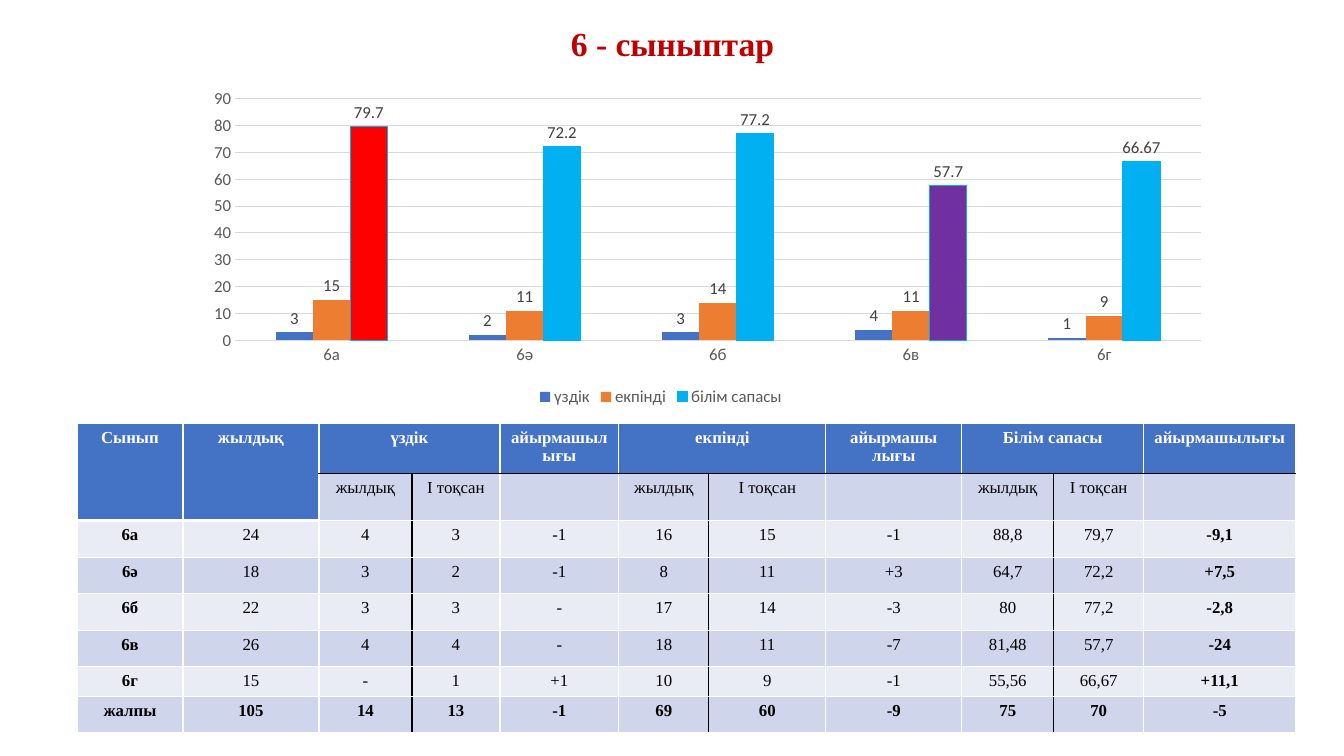
import dataclasses

import lxml.etree
import pptx
import pptx.chart.data
import pptx.dml.color
import pptx.enum.chart
import pptx.enum.text
import pptx.oxml.ns
import pptx.util

PX = 12192000 / 1344  # EMU per px


@dataclasses.dataclass(frozen=True)
class Theme:
    serif: str = "Times New Roman"
    sans: str = "Calibri"
    title_size: int = 24
    body_size: int = 12
    title: str = "C00000"
    black: str = "000000"
    white: str = "FFFFFF"
    header: str = "4472C4"
    bands: tuple = ("E9EBF5", "CFD5EA")
    series: tuple = ("4472C4", "ED7D31", "00B0F0")
    best: str = "FF0000"
    worst: str = "7030A0"
    axis_text: str = "595959"
    label_text: str = "404040"
    grid: str = "D9D9D9"


def px(n):
    return pptx.util.Emu(round(n * PX))


def rgb(color):
    return pptx.dml.color.RGBColor.from_string(color)


class Slide:
    def __init__(self, prs, theme):
        self.t = theme
        self.s = prs.slides.add_slide(prs.slide_layouts[6])

    def font(self, font, name, size, color, bold=False):
        font.name, font.size, font.bold = name, pptx.util.Pt(size), bold
        font.color.rgb = rgb(color)

    def line(self, line, color):
        line.color.rgb = rgb(color)
        line.width = pptx.util.Pt(0.75)

    def run(self, p, text, size, color, bold):
        p.alignment = pptx.enum.text.PP_ALIGN.CENTER
        r = p.add_run()
        r.text = text
        self.font(r.font, self.t.serif, size, color, bold)

    def heading(self, text, box):
        tf = self.s.shapes.add_textbox(*map(px, box)).text_frame
        tf.word_wrap = True
        tf.vertical_anchor = pptx.enum.text.MSO_ANCHOR.MIDDLE
        p = tf.paragraphs[0]
        p.line_spacing = 0.9
        self.run(p, text, self.t.title_size, self.t.title, True)

    def chart(self, box, categories, series, highlights, plot_area):
        data = pptx.chart.data.CategoryChartData()
        data.categories = categories
        for name, values in series:
            data.add_series(name, values)
        chart = self.s.shapes.add_chart(
            pptx.enum.chart.XL_CHART_TYPE.COLUMN_CLUSTERED, *map(px, box), data).chart
        t = self.t
        self.font(chart.font, t.sans, t.body_size, t.axis_text)
        chart.has_title = False
        chart.has_legend = True
        chart.legend.position = pptx.enum.chart.XL_LEGEND_POSITION.BOTTOM
        chart.legend.include_in_layout = False
        self.font(chart.legend.font, t.sans, t.body_size, t.axis_text)

        # Axes
        for axis in (chart.category_axis, chart.value_axis):
            axis.major_tick_mark = pptx.enum.chart.XL_TICK_MARK.NONE
            axis.minor_tick_mark = pptx.enum.chart.XL_TICK_MARK.NONE
            self.font(axis.tick_labels.font, t.sans, t.body_size, t.axis_text)
        self.line(chart.category_axis.format.line, t.grid)
        values = chart.value_axis
        values.minimum_scale, values.maximum_scale, values.major_unit = 0, 90, 10
        values.format.line.fill.background()
        self.line(values.major_gridlines.format.line, t.grid)

        # Columns and their labels
        plot = chart.plots[0]
        plot.gap_width, plot.overlap, plot.vary_by_categories = 219, 0, False
        for column, color in zip(plot.series, t.series):
            column.invert_if_negative = False
            column.format.fill.solid()
            column.format.fill.fore_color.rgb = rgb(color)
            labels = column.data_labels
            labels.show_value = True
            labels.position = pptx.enum.chart.XL_LABEL_POSITION.OUTSIDE_END
            self.font(labels.font, t.sans, t.body_size, t.label_text)
        quality = plot.series[-1]
        self.line(quality.format.line, t.series[-1])
        for index, color in highlights.items():
            point = quality.points[index].format
            point.fill.solid()
            point.fill.fore_color.rgb = rgb(color)
            self.line(point.line, t.series[-1])

        # Inner plot area
        qn = pptx.oxml.ns.qn
        area = chart.element.find(".//" + qn("c:plotArea"))
        for old in area.findall(qn("c:layout")):
            area.remove(old)
        layout = lxml.etree.Element(qn("c:layout"))
        area.insert(0, layout)
        manual = lxml.etree.SubElement(layout, qn("c:manualLayout"))
        settings = [("layoutTarget", "inner"), ("xMode", "edge"), ("yMode", "edge")]
        for tag, value in settings + list(zip("xywh", plot_area)):
            lxml.etree.SubElement(manual, qn("c:" + tag), val=str(value))

    def border(self, cell, side, color, width=1):
        qn = pptx.oxml.ns.qn
        tc_pr = cell._tc.get_or_add_tcPr()
        ln = lxml.etree.SubElement(tc_pr, qn("a:ln" + side), w=str(pptx.util.Pt(width)))
        fill = lxml.etree.SubElement(ln, qn("a:solidFill"))
        lxml.etree.SubElement(fill, qn("a:srgbClr"), val=color)

    def cell(self, cell, text, fill, color, bold, borders):
        for side, (edge, width) in borders.items():
            self.border(cell, side, edge, width)
        cell.fill.solid()
        cell.fill.fore_color.rgb = rgb(fill)
        tf = cell.text_frame
        for i, part in enumerate(text.split("\n") if text else []):
            p = tf.add_paragraph() if i else tf.paragraphs[0]
            self.run(p, part, self.t.body_size, color, bold)

    def table(self, left, top, widths, heights, rows, pairs):
        t = self.t
        table = self.s.shapes.add_table(
            len(rows), len(widths), px(left), px(top), px(sum(widths)), px(sum(heights))).table
        table.first_row = table.horz_banding = False
        for column, width in zip(table.columns, widths):
            column.width = px(width)
        for row, height in zip(table.rows, heights):
            row.height = px(height)
        last = len(widths) - 1
        for i, row in enumerate(rows):
            for j, text in enumerate(row):
                header = i == 0 or (i == 1 and j < 2)
                bold = header or i == len(rows) - 1 or (i > 1 and j in (0, last))
                borders = {side: (t.white, 1) for side in "LRTB"}
                if i > 0 and j in pairs:
                    borders["R"] = (t.black, 1)
                if i > 0 and j - 1 in pairs:
                    borders["L"] = (t.black, 1)
                if i < 2 and j < 2:
                    borders["B"] = (t.white, 3)
                elif i < 2:
                    borders["T" if i else "B"] = (t.black, 1)
                self.cell(table.cell(i, j), text, t.header if header else t.bands[i % 2],
                          t.white if header else t.black, bold, borders)
        for j in range(2):
            table.cell(0, j).merge(table.cell(1, j))
        for j in pairs:
            table.cell(0, j).merge(table.cell(0, j + 1))


def main():
    prs = pptx.Presentation()
    prs.slide_width, prs.slide_height = px(1344), px(756)
    theme = Theme()
    slide = Slide(prs, theme)

    # Title
    slide.heading("6 - сыныптар", (93, 19, 1159, 54))

    # Results by class
    slide.chart(
        (119, 51, 1084, 360),
        ["6а", "6ә", "6б", "6в", "6г"],
        [("үздік", (3, 2, 3, 4, 1)),
         ("екпінді", (15, 11, 14, 11, 9)),
         ("білім сапасы", (79.7, 72.2, 77.2, 57.7, 66.67))],
        {0: theme.best, 3: theme.worst},
        (0.107, 0.133, 0.891, 0.671))

    # Comparison with the year
    term = ["жылдық", "І тоқсан", ""]
    rows = [
        ["Сынып", "жылдық", "үздік", "", "айырмашылығы", "екпінді", "",
         "айырмашы\nлығы", "Білім сапасы", "", "айырмашылығы"],
        ["", ""] + term * 3,
        ["6а", "24", "4", "3", "-1", "16", "15", "-1", "88,8", "79,7", "-9,1"],
        ["6ә", "18", "3", "2", "-1", "8", "11", "+3", "64,7", "72,2", "+7,5"],
        ["6б", "22", "3", "3", "-", "17", "14", "-3", "80", "77,2", "-2,8"],
        ["6в", "26", "4", "4", "-", "18", "11", "-7", "81,48", "57,7", "-24"],
        ["6г", "15", "-", "1", "+1", "10", "9", "-1", "55,56", "66,67", "+11,1"],
        ["жалпы", "105", "14", "13", "-1", "69", "60", "-9", "75", "70", "-5"],
    ]
    slide.table(77, 423, [106, 136, 93, 88, 119, 90, 117, 136, 92, 90, 152],
                [48, 47, 37, 36, 37, 36, 29, 36], rows, pairs=(2, 5, 8))

    prs.save("out.pptx")


if __name__ == "__main__":
    main()
